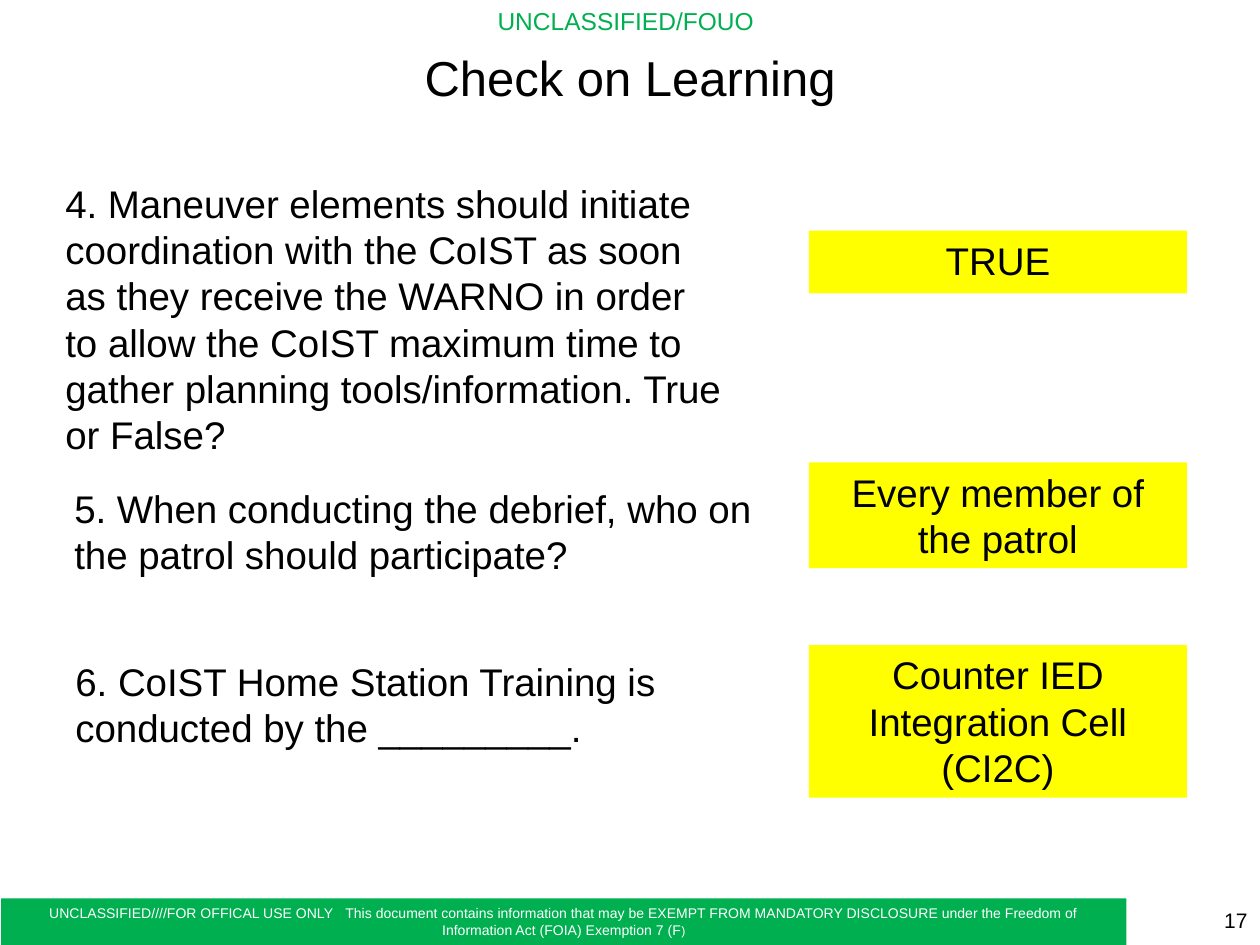
from dataclasses import dataclass

from pptx import Presentation
from pptx.dml.color import RGBColor as Color
from pptx.enum.shapes import MSO_SHAPE as Preset
from pptx.enum.text import MSO_ANCHOR as Anchor, MSO_AUTO_SIZE as AutoSize, PP_ALIGN as Align
from pptx.util import Inches, Pt


@dataclass(frozen=True)
class Theme:
    font: str = "Arial"
    ink: str = "000000"
    green: str = "00B050"
    yellow: str = "FFFF00"
    white: str = "FFFFFF"
    title: float = 28
    body: float = 22
    marking: float = 14
    number: float = 12
    footer: float = 8
    footer_end: float = 7


THEME = Theme()
WIDTH, HEIGHT = 10, 7.5
INSET = 0.1
ANSWER_LEFT, ANSWER_WIDTH = 6.42, 3

# question, its box, its left inset, answer, answer's top and height
QUIZ = [
    ("4. Maneuver elements should initiate coordination with the CoIST as soon "
     "as they receive the WARNO in order to allow the CoIST maximum time to "
     "gather planning tools/information. True or False?",
     (0.42, 1.38, 5.42, 2.32), INSET, "TRUE", 1.83, 0.5),
    ("5. When conducting the debrief, who on the patrol should participate?",
     (0.42, 3.8, 5.67, 1.21), INSET + 0.07, "Every member of the patrol", 3.67, 0.84),
    ("6. CoIST Home Station Training is conducted by the _________.",
     (0.5, 5.17, 5.5, 0.84), INSET, "Counter IED Integration Cell (CI2C)", 5.12, 1.21),
]


def add_run(paragraph, text, size, color):
    run = paragraph.add_run()
    run.text = text
    for name, value in {"name": THEME.font, "size": Pt(size)}.items():
        setattr(run.font, name, value)
    run.font.color.rgb = Color.from_string(color)
    return run


def write(shape, text, size, color=THEME.ink, align=Align.LEFT, **frame_format):
    frame = shape.text_frame
    defaults = {"word_wrap": True, "auto_size": AutoSize.NONE, "vertical_anchor": Anchor.TOP}
    for name, value in (defaults | frame_format).items():
        setattr(frame, name, value)
    paragraph = frame.paragraphs[0]
    paragraph.alignment = align
    add_run(paragraph, text, size, color)
    return paragraph


def add_text(slide, box, *text, **formats):
    shape = slide.shapes.add_textbox(*map(Inches, box))
    return write(shape, *text, **formats)


def add_panel(slide, box, fill, *text, **formats):
    """Borderless filled rectangle with centred text."""
    shape = slide.shapes.add_shape(Preset.RECTANGLE, *map(Inches, box))
    shape.shadow.inherit = False
    shape.fill.solid()
    shape.fill.fore_color.rgb = Color.from_string(fill)
    shape.line.fill.background()
    return write(shape, *text, align=Align.CENTER, **formats)


def add_footer(slide, box):
    paragraph = add_panel(slide, box, THEME.green, "UNCLASSIFIED////FOR OFFICAL USE ONLY",
                          THEME.footer, THEME.white)
    gap = add_run(paragraph, " ", THEME.footer, THEME.white)
    gap.font._element.set("spc", "440")  # widens the space to three
    add_run(paragraph, "This document contains information that may be EXEMPT FROM MANDATORY "
            "DISCLOSURE under the Freedom of Information Act (FOIA) Exemption 7 (F",
            THEME.footer, THEME.white)
    add_run(paragraph, ")", THEME.footer_end, THEME.white)


def add_title(slide, box):
    title = slide.shapes.title
    for name, value in zip(("left", "top", "width", "height"), box):
        setattr(title, name, Inches(value))
    write(title, "Check on Learning", THEME.title, align=Align.CENTER)


def add_quiz(slide):
    for question, box, inset, answer, top, height in QUIZ:
        add_text(slide, box, question, THEME.body, margin_left=Inches(inset))
        add_panel(slide, (ANSWER_LEFT, top, ANSWER_WIDTH, height), THEME.yellow,
                  answer, THEME.body)


def main():
    presentation = Presentation()
    presentation.slide_width, presentation.slide_height = Inches(WIDTH), Inches(HEIGHT)
    slide = presentation.slides.add_slide(presentation.slide_layouts[5])
    add_text(slide, (3.85, 0, 2.29, 0.34), "UNCLASSIFIED/FOUO", THEME.marking, THEME.green,
             word_wrap=False)
    add_footer(slide, (0.01, HEIGHT - 0.37, 8.93, 0.37))
    add_text(slide, (WIDTH - 0.9, HEIGHT - 0.4, 0.9, 0.4), "17", THEME.number,
             align=Align.RIGHT, vertical_anchor=Anchor.MIDDLE)
    add_title(slide, (0, 0.33, WIDTH, 0.57))
    add_quiz(slide)
    presentation.save("out.pptx")


if __name__ == "__main__":
    main()
